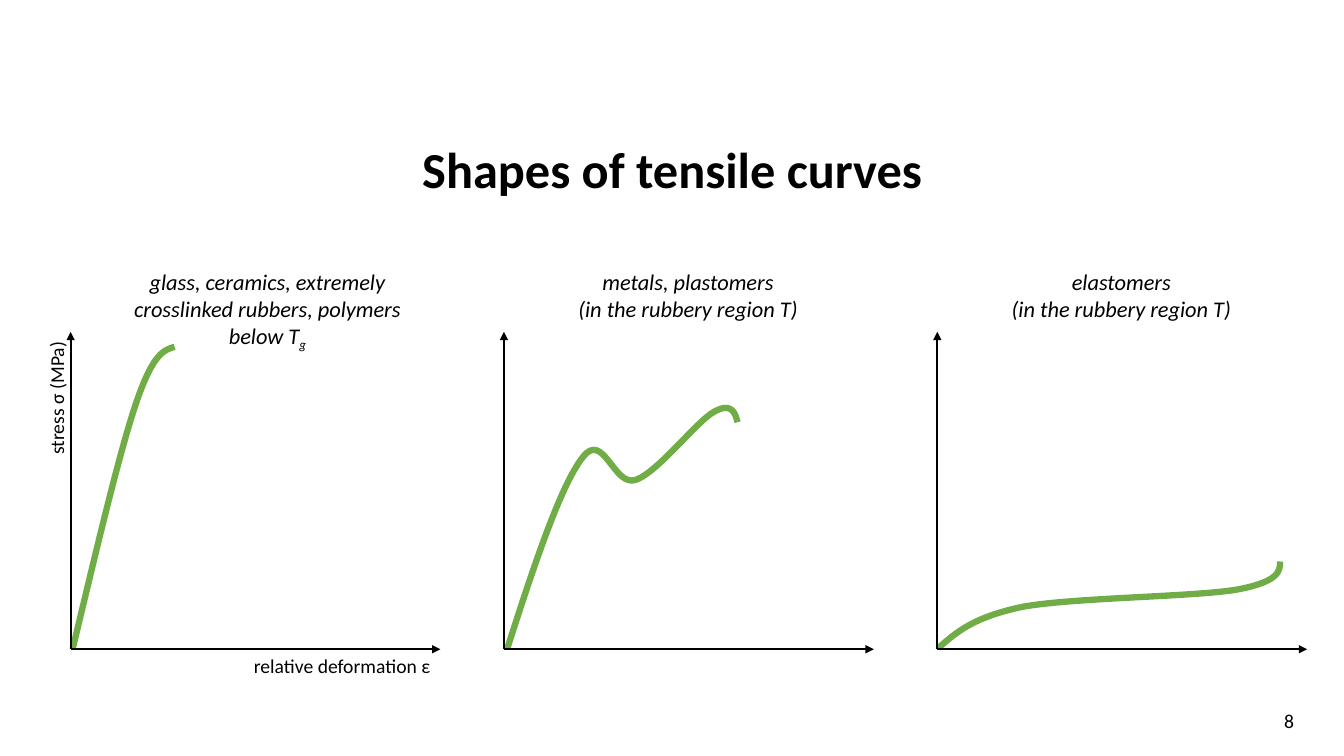
from copy import deepcopy
from dataclasses import dataclass

from lxml.etree import SubElement
from pptx import Presentation
from pptx.dml.color import RGBColor
from pptx.enum.shapes import MSO_CONNECTOR
from pptx.enum.text import MSO_ANCHOR, PP_ALIGN
from pptx.oxml.ns import qn
from pptx.util import Cm, Pt


@dataclass(frozen=True)
class Theme:
    font: str = "Calibri"
    ink: RGBColor = RGBColor(0, 0, 0)
    curve: RGBColor = RGBColor(0x70, 0xAD, 0x47)
    title_size: int = 36
    caption_size: int = 16
    label_size: int = 14
    axis_width: float = 1.5
    curve_width: float = 4.5


@dataclass(frozen=True)
class Box:
    """A region in centimetres."""
    left: float
    top: float
    width: float
    height: float

    @property
    def bottom(self):
        return self.top + self.height

    def lengths(self):
        return [Cm(value) for value in (self.left, self.top, self.width, self.height)]


THEME = Theme()
TITLE_BOX = Box(2.34, 2.51, 29.21, 3.68)
NUMBER_BOX = Box(31.78, 17.65, 1.42, 1.02)
FIRST_PANEL = Box(1.78, 8.36, 9.32, 8)
PANEL_STEP = 10.92
CAPTION_INSET = 0.64
CAPTION_TOP = 6.63
LABEL_HEIGHT = 0.86

# Each curve: caption, subscript, caption width and height, then the start point
# and Bezier control points as centimetres right of and above the axis origin.
PANELS = [
    ("glass, ceramics, extremely crosslinked rubbers, polymers below T", "g", 8.64, 2.31,
     [(0.05, 0), (0.64, 2.46), (1.22, 4.93), (1.65, 6.2),
      (2.08, 7.47), (2.36, 7.54), (2.62, 7.62)]),
    ("metals, plastomers\v(in the rubbery region T)", "", 8, 1.63,
     [(0.08, 0), (0.74, 2.06), (1.42, 4.11), (1.98, 4.83),
      (2.51, 5.54), (2.77, 4.06), (3.33, 4.27),
      (3.89, 4.47), (4.88, 5.77), (5.31, 5.99),
      (5.74, 6.22), (5.82, 5.97), (5.89, 5.72)]),
    ("elastomers\v(in the rubbery region T)", "", 8, 1.63,
     [(0.03, 0.03), (0.48, 0.43), (0.91, 0.81), (2.16, 1.07),
      (3.43, 1.3), (6.45, 1.32), (7.54, 1.5),
      (8.61, 1.7), (8.64, 1.96), (8.64, 2.21)]),
]


def apply_format(target, values):
    for name, value in values.items():
        setattr(target, name, value)


def write_text(shape, text, size, align=PP_ALIGN.CENTER, anchor=MSO_ANCHOR.TOP,
               subscript="", **font_values):
    frame = shape.text_frame
    apply_format(frame, {"word_wrap": True, "vertical_anchor": anchor})
    para = frame.paragraphs[0]
    para.text = text
    para.alignment = align
    if subscript:
        para.add_run().text = subscript
    values = {"name": THEME.font, "size": Pt(size), **font_values}
    for span in para.runs:
        apply_format(span.font, values)
        span.font.color.rgb = THEME.ink
    if subscript:
        para.runs[-1].font._element.set("baseline", "-25000")
    for line_break in para._p.findall(qn("a:br")):
        line_break.append(deepcopy(para.runs[0].font._element))
    return para


def add_label(shapes, box, text, size, **values):
    label = shapes.add_textbox(*box.lengths())
    write_text(label, text, size, **values)
    return label


def add_title(page, box):
    title = page.shapes.title
    names = ("left", "top", "width", "height")
    apply_format(title, dict(zip(names, box.lengths())))
    para = write_text(title, "Shapes of tensile curves", THEME.title_size,
                      anchor=MSO_ANCHOR.MIDDLE, bold=True)
    para.line_spacing = 0.9


def add_axes(shapes, box):
    origin = Cm(box.left), Cm(box.bottom)
    ends = [(Cm(box.left + box.width), Cm(box.bottom)), (Cm(box.left), Cm(box.top))]
    for end in ends:
        axis = shapes.add_connector(MSO_CONNECTOR.STRAIGHT, *origin, *end)
        axis.line.color.rgb = THEME.ink
        axis.line.width = Pt(THEME.axis_width)
        SubElement(axis.line._get_or_add_ln(), qn("a:tailEnd"), type="triangle")
        SubElement(axis._element.spPr, qn("a:effectLst"))


def add_axis_names(shapes, box):
    """Name both axes, the vertical one turned to read upwards."""
    values = {"size": THEME.label_size, "align": PP_ALIGN.RIGHT}
    add_label(shapes, Box(box.left, box.bottom, box.width, LABEL_HEIGHT),
              "relative deformation ε", **values)
    middle_x, middle_y = box.left - 0.35, box.top + box.height / 2
    stress_box = Box(middle_x - box.height / 2, middle_y - LABEL_HEIGHT / 2,
                     box.height, LABEL_HEIGHT)
    add_label(shapes, stress_box, "stress σ (MPa)", **values).rotation = 270


def add_curve(page, box, points):
    """Draw a smooth open line, three control points to each Bezier segment."""
    places = [(Cm(box.left + right), Cm(box.bottom - up)) for right, up in points]
    builder = page.shapes.build_freeform(*places[0])
    builder.add_line_segments(places[1:], close=False)
    curve = builder.convert_to_shape()
    curve.shadow.inherit = False
    curve.fill.background()
    curve.line.color.rgb = THEME.curve
    curve.line.width = Pt(THEME.curve_width)
    segments = list(curve._element.iter(qn("a:lnTo")))
    outline = segments[0].getparent()
    for start in range(0, len(segments), 3):
        bezier = SubElement(outline, qn("a:cubicBezTo"))
        for segment in segments[start:start + 3]:
            bezier.append(segment[0])
            outline.remove(segment)


def add_panel(page, box, caption, subscript, width, height, points, named):
    add_curve(page, box, points)
    shapes = page.shapes.add_group_shape().shapes
    add_axes(shapes, box)
    if named:
        add_axis_names(shapes, box)
    caption_box = Box(box.left + CAPTION_INSET, CAPTION_TOP, width, height)
    add_label(page.shapes, caption_box, caption, THEME.caption_size,
              subscript=subscript, italic=True)


def build_curves_page(deck):
    page = deck.slides.add_slide(deck.slide_layouts[5])
    add_title(page, TITLE_BOX)
    first = FIRST_PANEL
    for index, panel in enumerate(PANELS):
        box = Box(first.left + index * PANEL_STEP, first.top, first.width, first.height)
        add_panel(page, box, *panel, named=index == 0)
    add_label(page.shapes, NUMBER_BOX, "8", THEME.label_size, anchor=MSO_ANCHOR.MIDDLE)


def main():
    deck = Presentation()
    deck.slide_width, deck.slide_height = Cm(33.87), Cm(19.05)
    build_curves_page(deck)
    deck.save("out.pptx")


if __name__ == "__main__":
    main()
